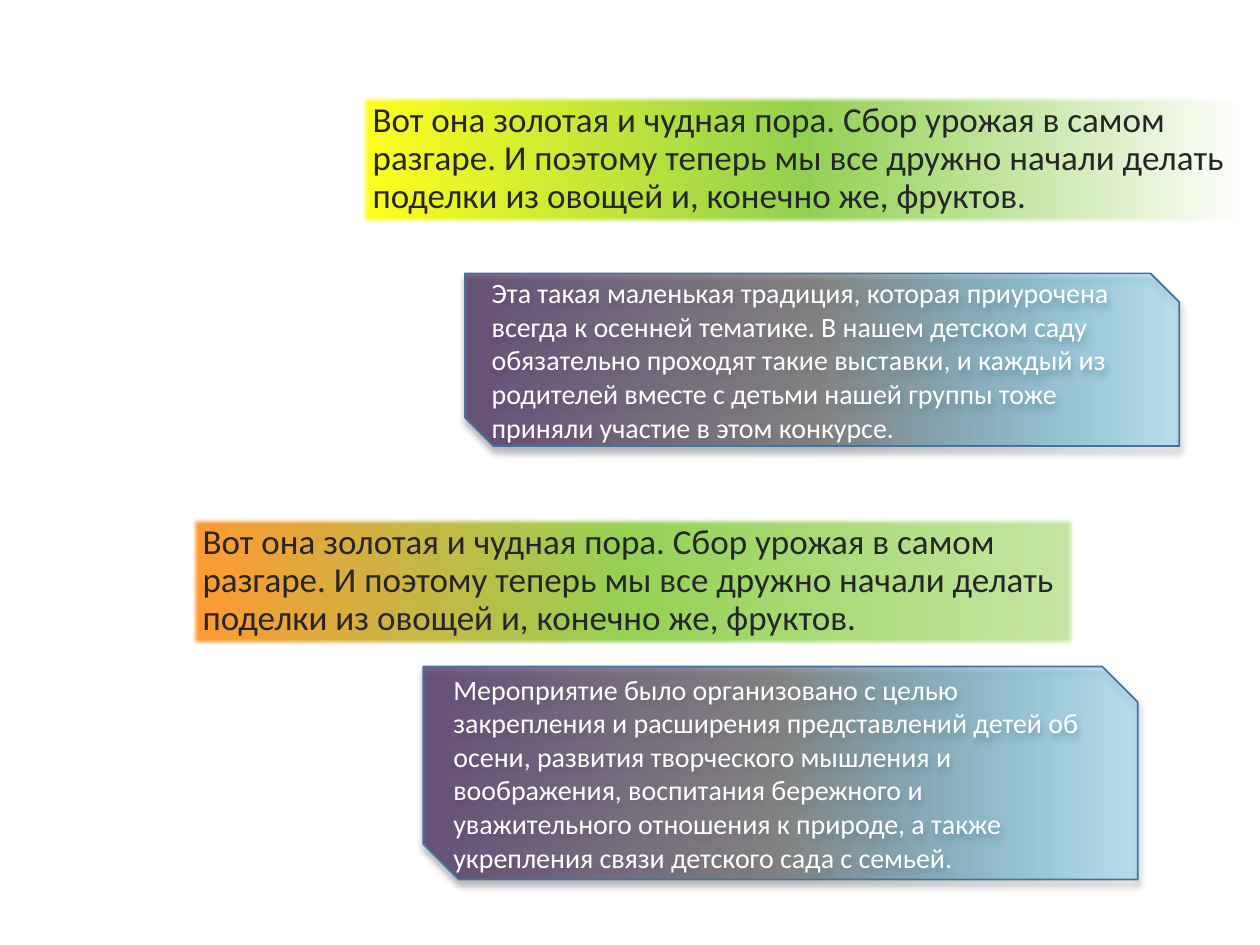
from lxml.etree import SubElement
from pptx import Presentation
from pptx.dml.color import RGBColor
from pptx.enum.shapes import MSO_SHAPE
from pptx.enum.text import MSO_ANCHOR, PP_ALIGN
from pptx.oxml.ns import qn
from pptx.util import Inches, Pt

COLORS = {
    "yellow": "FFFF1C", "orange": "FF9933", "green": "92D050",
    "violet": "3A1953", "gray": "6A6A6A", "sky": "00B0F0",
    "outline": "43739E", "dark": "262626", "white": "FFFFFF", "black": "000000",
}
COLUMNS, ROWS = 100, 75

# Gradient stops: position, colour, opacity (all but the colour in percent)
YELLOW_FADE = [(0, "yellow", 100), (50, "green", 100), (100, "green", 0)]
ORANGE_FADE = [(0, "orange", 100), (50, "green", 97), (100, "green", 51)]
VIOLET_FADE = [(0, "violet", 65), (50, "gray", 68), (100, "sky", 20)]

HARVEST = (
    "Вот она золотая и чудная пора. Сбор урожая в самом разгаре. "
    "И поэтому теперь мы все дружно начали делать поделки из овощей "
    "и, конечно же, фруктов."
)
TRADITION = (
    "Эта такая маленькая традиция, которая приурочена всегда к осенней тематике. "
    "В нашем детском саду обязательно проходят такие выставки, и каждый из "
    "родителей вместе с детьми нашей группы тоже приняли участие в этом конкурсе."
)
PURPOSE = (
    "Мероприятие было организовано с целью закрепления и расширения представлений "
    "детей об осени, развития творческого мышления и воображения, воспитания "
    "бережного и уважительного отношения к природе, а также укрепления связи "
    "детского сада с семьей."
)


def rgb(name):
    return RGBColor.from_string(COLORS[name])


def add_color(parent, name, opacity):
    color = SubElement(parent, qn("a:srgbClr"), val=COLORS[name])
    if opacity < 100:
        SubElement(color, qn("a:alpha"), val=str(opacity * 1000))


def write_text(shape, text, size, color, font="Calibri", line_spacing=None):
    frame = shape.text_frame
    frame.word_wrap = True
    frame.vertical_anchor = MSO_ANCHOR.MIDDLE
    paragraph = frame.paragraphs[0]
    paragraph.alignment = PP_ALIGN.LEFT
    paragraph.line_spacing = line_spacing
    run = paragraph.add_run()
    run.text = text
    run.font.name = font
    run.font.size = Pt(size)
    run.font.color.rgb = rgb(color)


class SlideBuilder:
    def __init__(self, presentation):
        self.slide = presentation.slides.add_slide(presentation.slide_layouts[6])
        self.column = presentation.slide_width / COLUMNS
        self.row = presentation.slide_height / ROWS

    def gradient_shape(self, kind, left, top, width, height, stops):
        shape = self.slide.shapes.add_shape(
            kind, round(left * self.column), round(top * self.row),
            round(width * self.column), round(height * self.row))
        shape.shadow.inherit = False
        shape.fill.gradient()
        shape.fill.gradient_angle = 0
        stop_list = shape._element.spPr.find(".//" + qn("a:gsLst"))
        stop_list.clear()
        for position, color, opacity in stops:
            stop = SubElement(stop_list, qn("a:gs"), pos=str(position * 1000))
            add_color(stop, color, opacity)
        return shape

    def add_effect(self, shape, tag, **attributes):
        effects = shape._element.spPr.find(qn("a:effectLst"))
        return SubElement(effects, qn(tag), **attributes)

    def banner(self, left, top, text, stops):
        shape = self.gradient_shape(MSO_SHAPE.RECTANGLE, left, top, 70.3, 10.3, stops)
        shape.line.fill.background()
        self.add_effect(shape, "a:softEdge", rad=str(Pt(2.5)))
        write_text(shape, text, size=20, color="dark", line_spacing=0.9)

    def card(self, left, top, height, text):
        shape = self.gradient_shape(
            MSO_SHAPE.SNIP_2_DIAG_RECTANGLE, left, top, 56.7, height, VIOLET_FADE)
        shape.line.color.rgb = rgb("outline")
        shape.line.width = Pt(1)
        shadow = self.add_effect(
            shape, "a:outerShdw", blurRad=str(Pt(4)), dist=str(Pt(3)),
            dir="5400000", algn="t", rotWithShape="0")
        add_color(shadow, "black", 40)
        write_text(shape, text, size=16, color="white")


def main():
    presentation = Presentation()
    presentation.slide_width = Inches(10)
    presentation.slide_height = Inches(7.5)
    builder = SlideBuilder(presentation)
    builder.banner(28.6, 7.5, HARVEST, YELLOW_FADE)
    builder.card(36.9, 21.7, 13.7, TRADITION)
    builder.banner(15.1, 41, HARVEST, ORANGE_FADE)
    builder.card(33.6, 52.9, 16.9, PURPOSE)
    presentation.save("out.pptx")


if __name__ == "__main__":
    main()
